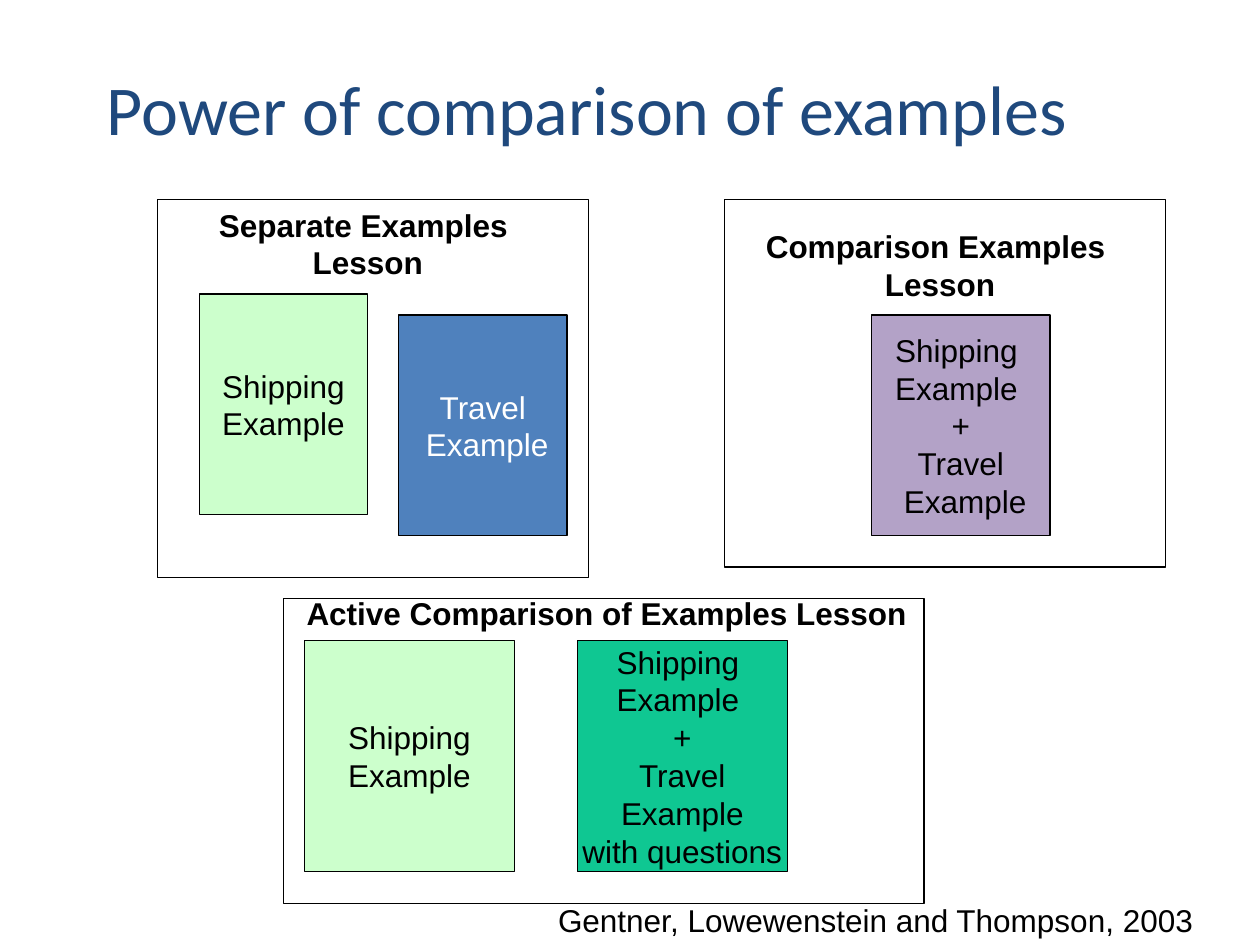
from pptx import Presentation
from pptx.dml.color import RGBColor
from pptx.enum.shapes import MSO_SHAPE
from pptx.enum.text import MSO_ANCHOR, PP_ALIGN
from pptx.util import Cm, Pt

RECTANGLE = MSO_SHAPE.RECTANGLE
TOP, MIDDLE = MSO_ANCHOR.TOP, MSO_ANCHOR.MIDDLE
LEFT, CENTER = PP_ALIGN.LEFT, PP_ALIGN.CENTER

COLORS = {
    "title": "1F497D",
    "black": "000000",
    "white": "FFFFFF",
    "mint": "CCFFCC",
    "blue": "4F81BD",
    "lilac": "B3A2C7",
    "green": "0FC792",
}
HANGING = Cm(0.95)

FRAMES = [
    (14.61, 4.02, 8.89, 7.41),
    (3.18, 4.02, 8.68, 7.62),
    (5.72, 12.07, 12.91, 6.14),
]
CAPTIONS = [
    ((14.82, 4.45, 8.26, 3.3), ["Comparison Examples ", "Lesson"], CENTER),
    ((3.39, 4.02, 8.05, 6.35), ["Separate Examples ", "Lesson"], CENTER),
    ((5.93, 11.85, 13.34, 2.54), ["Active Comparison of Examples Lesson"], LEFT),
]
SHIPPING = ["Shipping", "Example"]
BOTH = ["Shipping ", "Example ", "+", "Travel"]
CARDS = [
    ((4.02, 5.93, 3.39, 4.45), SHIPPING, "mint", "black"),
    ((8.04, 6.35, 3.39, 4.45), ["Travel", " Example"], "blue", "white"),
    ((17.57, 6.35, 3.6, 4.45), BOTH + [" Example"], "lilac", "black"),
    ((6.14, 12.91, 4.23, 4.66), SHIPPING, "mint", "black"),
    ((11.64, 12.91, 4.23, 4.66), BOTH + ["Example", "with questions"], "green", "black"),
]


def color(name):
    """Return the named colour."""
    return RGBColor.from_string(COLORS[name])


def lengths(place):
    """Turn centimetre numbers into lengths."""
    return [Cm(number) for number in place]


def write(frame, lines, align, tint="black", size=18, font="Arial", bold=False):
    """Write one paragraph per line and return the paragraphs."""
    for index, line in enumerate(lines):
        para = frame.paragraphs[0] if index == 0 else frame.add_paragraph()
        para.alignment = align
        span = para.add_run()
        span.text = line
        span.font.name = font
        span.font.size = Pt(size)
        span.font.bold = bold
        span.font.color.rgb = color(tint)
    return frame.paragraphs


def add_title(page, text):
    """Place and fill the title placeholder."""
    box = page.shapes.title
    box.left, box.top, box.width, box.height = lengths((1.9, 1.19, 20.52, 1.9))
    box.text_frame.vertical_anchor = TOP
    box.text_frame.word_wrap = True
    write(box.text_frame, [text], LEFT, "title", 40, "Calibri")


def add_rectangle(page, place, fill=None):
    """Add a thinly outlined rectangle, filled if a colour is named."""
    box = page.shapes.add_shape(RECTANGLE, *lengths(place))
    box.shadow.inherit = False
    box.line.color.rgb = color("black")
    box.line.width = Pt(0.75)
    if fill:
        box.fill.solid()
        box.fill.fore_color.rgb = color(fill)
    else:
        box.fill.background()
    return box


def add_card(page, place, lines, fill, tint):
    """Add a coloured example card with centred text."""
    frame = add_rectangle(page, place, fill).text_frame
    frame.word_wrap = False
    frame.vertical_anchor = MIDDLE
    write(frame, lines, CENTER, tint)


def add_caption(page, place, lines, align):
    """Add a bold lesson caption with a hanging indent."""
    frame = page.shapes.add_textbox(*lengths(place)).text_frame
    frame.word_wrap = True
    for para in write(frame, lines, align, bold=True):
        properties = para._p.get_or_add_pPr()
        properties.set("marL", str(HANGING))
        properties.set("indent", str(-HANGING))


def add_citation(page, text):
    """Add the source line at the bottom."""
    frame = page.shapes.add_textbox(*lengths((11, 18.03, 13.44, 1.02))).text_frame
    frame.word_wrap = False
    write(frame, [text], LEFT)


def main():
    """Build and save the slide."""
    deck = Presentation()
    deck.slide_width, deck.slide_height = Cm(25.4), Cm(19.05)
    page = deck.slides.add_slide(deck.slide_layouts[5])
    add_title(page, "Power of comparison of examples")
    add_citation(page, "Gentner, Lowewenstein and Thompson, 2003")
    for place in FRAMES:
        add_rectangle(page, place)
    for caption in CAPTIONS:
        add_caption(page, *caption)
    for card in CARDS:
        add_card(page, *card)
    deck.save("out.pptx")


if __name__ == "__main__":
    main()
